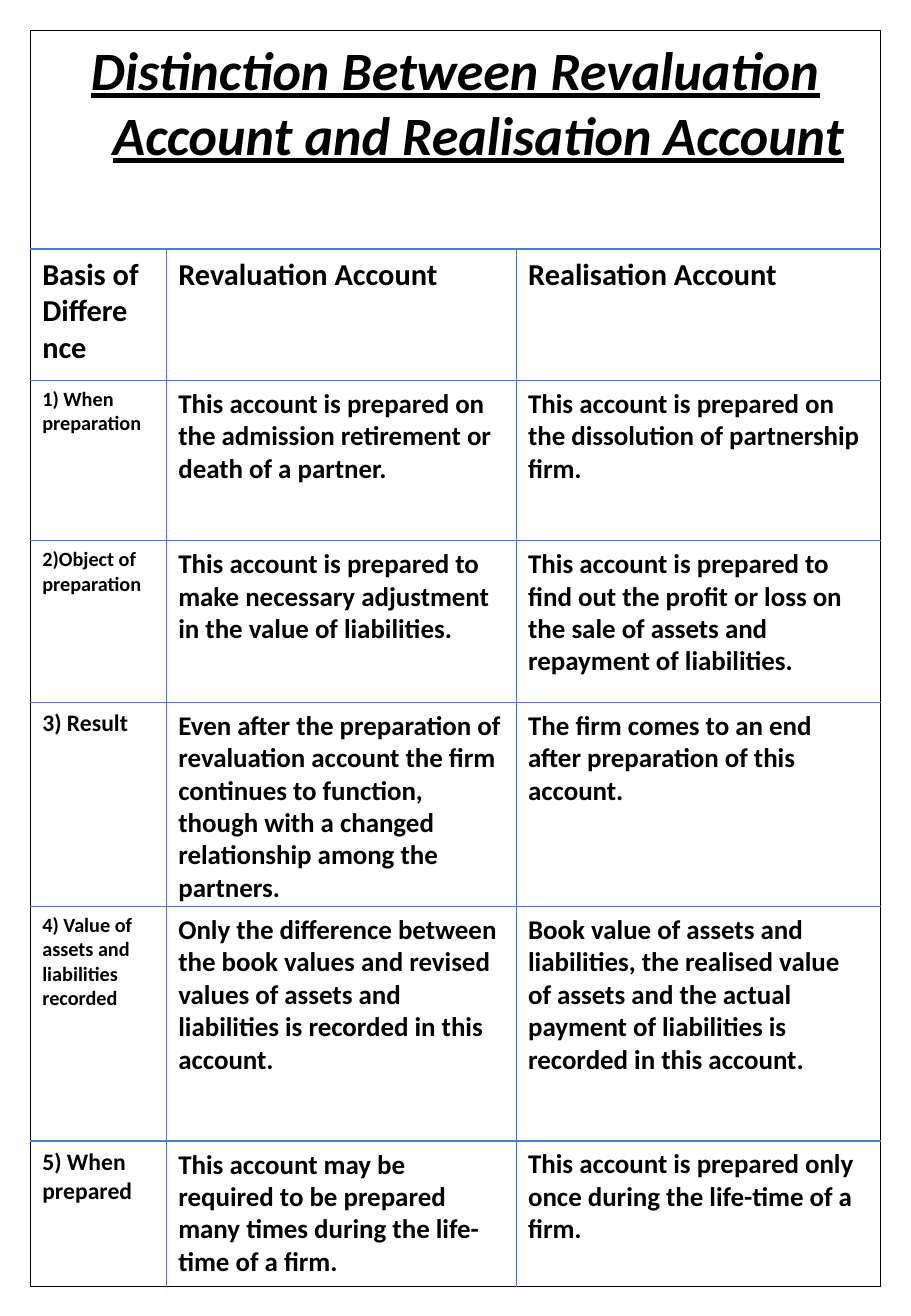
"""Build a one-page comparison of the revaluation and realisation accounts."""
from lxml.etree import SubElement
from pptx import Presentation
from pptx.dml.color import RGBColor
from pptx.enum.shapes import MSO_CONNECTOR as CONNECTOR, MSO_SHAPE as SHAPE
from pptx.enum.text import MSO_ANCHOR as ANCHOR, MSO_AUTO_SIZE as AUTO_SIZE, PP_ALIGN as ALIGN
from pptx.oxml.ns import qn
from pptx.util import Inches, Pt

BLACK, BLUE = "000000", "4B7EBC"
LEFT, RIGHT, TOP, BOTTOM = 0.25, 7.25, 0.25, 10.59
COL_LEFTS = [LEFT, 1.37, 4.25]
ROW_TOPS = [2.05, 3.13, 4.45, 5.78, 7.46, 9.39]
# Each entry: text, size, box width, number of lines
ROWS = [
    [("Basis of Difference", 18, 1, 3),
     ("Revaluation Account", 18, 2.5, 1),
     ("Realisation Account", 18, 3.12, 1)],
    [("1) When\npreparation", 12, 1.12, 2),
     ("This account is prepared on the admission retirement or death of a partner.", 16, 2.88, 3),
     ("This account is prepared on the dissolution of partnership firm.", 16, 3, 3)],
    [("2)Object of preparation", 12, 1.12, 2),
     ("This account is prepared to make necessary adjustment in the value of liabilities.",
      16, 2.81, 3),
     ("This account is prepared to find out the profit or loss on the sale of assets "
      "and repayment of liabilities.", 16, 2.88, 4)],
    [("3) Result", 14, 1.12, 1),
     ("Even after the preparation of revaluation account the firm continues to function, "
      "though with a changed relationship among the partners.", 16, 2.88, 6),
     ("The firm comes to an end after preparation of this account.", 16, 3, 3)],
    [("4) Value of assets and liabilities recorded", 12, 1.12, 4),
     ("Only the difference between the book values and revised values of assets and "
      "liabilities is recorded in this account.", 16, 2.88, 5),
     ("Book value of assets and liabilities, the realised value of assets and the actual "
      "payment of liabilities is recorded in this account.", 16, 3, 5)],
    [("5) When prepared", 14, 1.12, 2),
     ("This account may be required to be prepared many times during the life-time of a firm.",
      16, 2.88, 4),
     ("This account is prepared only once during the life-time of a firm.", 16, 3, 3)],
]


def rgb(color):
    return RGBColor.from_string(color)


def write(tf, text, size):
    tf.word_wrap = True
    tf.text = text
    for p in tf.paragraphs:
        for r in p.runs:
            r.font.name, r.font.size, r.font.bold = "Calibri", Pt(size), True
            r.font.color.rgb = rgb(BLACK)


prs = Presentation()
prs.slide_width, prs.slide_height = Inches(7.5), Inches(10.83)
s = prs.slides.add_slide(prs.slide_layouts[6])

sp = s.shapes.add_shape(SHAPE.RECTANGLE, Inches(LEFT), Inches(TOP),
                        Inches(RIGHT - LEFT), Inches(BOTTOM - TOP))
sp.shadow.inherit = False
sp.fill.background()
sp.line.color.rgb = rgb(BLACK)
sp.line.width = Pt(0.75)
tf = sp.text_frame
tf.vertical_anchor = ANCHOR.TOP
write(tf, "Distinction Between Revaluation Account and Realisation Account", 32)
p = tf.paragraphs[0]
p.alignment = ALIGN.CENTER
p.space_before = Pt(2)
pPr = p._p.get_or_add_pPr()
pPr.set("marL", str(Inches(0.38)))
pPr.set("indent", str(Inches(-0.38)))
p.runs[0].font.italic = p.runs[0].font.underline = True

row_lines = [(LEFT, y, RIGHT, y) for y in ROW_TOPS]
column_lines = [(x, ROW_TOPS[0], x, BOTTOM) for x in COL_LEFTS[1:]]
for ends in row_lines + column_lines:
    line = s.shapes.add_connector(CONNECTOR.STRAIGHT, *map(Inches, ends))
    line.line.color.rgb = rgb(BLUE)
    line.line.width = Pt(0.75)
    SubElement(line._element.spPr, qn("a:effectLst"))

for y, row in zip(ROW_TOPS, ROWS):
    for x, (text, size, width, lines) in zip(COL_LEFTS, row):
        height = 0.1 + lines * size * 1.2 / 72
        sp = s.shapes.add_textbox(Inches(x), Inches(y), Inches(width), Inches(height))
        write(sp.text_frame, text, size)
        sp.text_frame.auto_size = AUTO_SIZE.SHAPE_TO_FIT_TEXT

prs.save("out.pptx")
